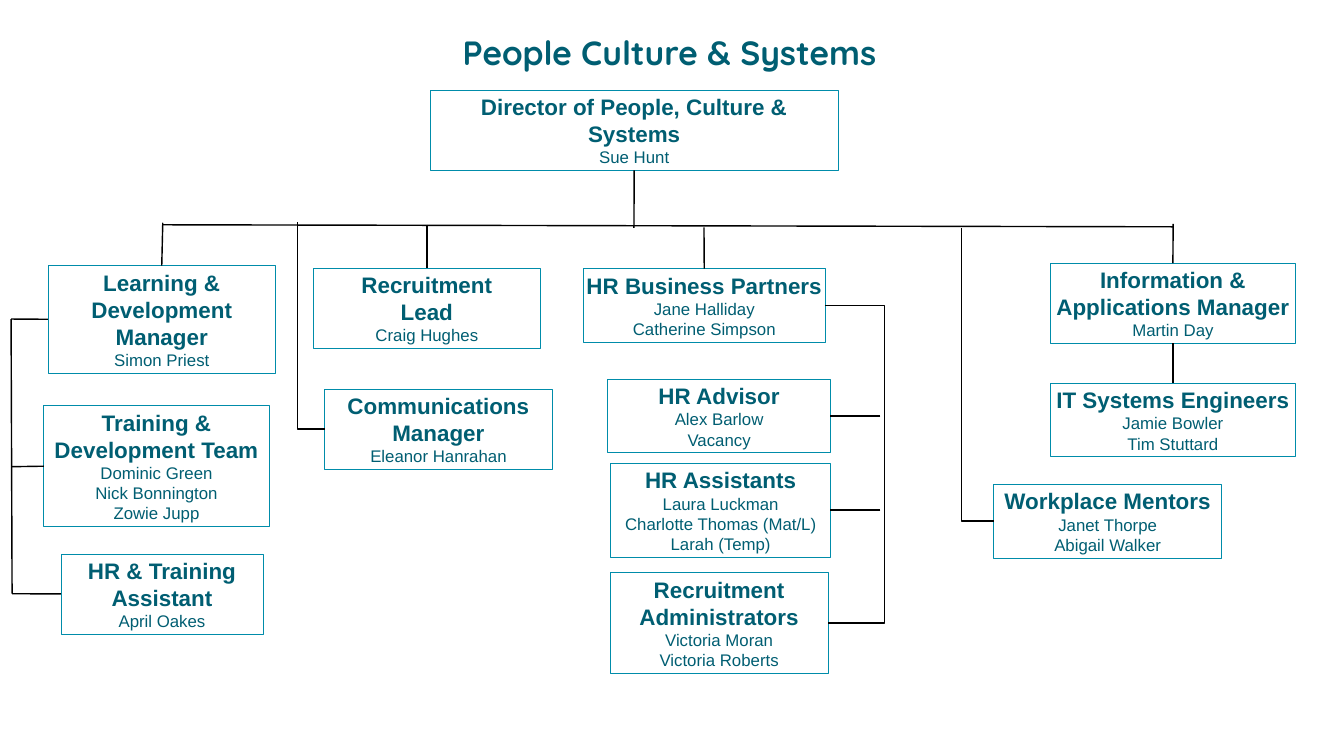
from lxml.etree import SubElement
from pptx import Presentation
from pptx.dml.color import RGBColor
from pptx.enum.shapes import MSO_CONNECTOR as Link, MSO_SHAPE as Shape
from pptx.enum.text import MSO_ANCHOR as Anchor, MSO_AUTO_SIZE as AutoSize, PP_ALIGN as Align
from pptx.oxml.ns import qn
from pptx.util import Inches, Pt

TEAL, BORDER, BLACK = "005E72", "008CAA", "000000"
TOP, LEFT, BOTTOM, RIGHT = range(4)


def color(value):
    return RGBColor.from_string(value)


def add_line(paragraph, words, size, bold, font="Arial"):
    paragraph.alignment = Align.CENTER
    run = paragraph.add_run()
    run.text = words
    run.font.name = font
    run.font.size = Pt(size)
    run.font.bold = bold
    run.font.color.rgb = color(TEAL)


def heading(slide, left, top, width, height):
    box = slide.shapes.add_textbox(Inches(left), Inches(top), Inches(width), Inches(height))
    box.text_frame.word_wrap = True
    paragraph = box.text_frame.paragraphs[0]
    paragraph.line_spacing = 0.9
    add_line(paragraph, "People Culture & Systems", 48, True, "Quicksand")


def role(slide, left, top, width, height, titles, people):
    card = slide.shapes.add_shape(
        Shape.RECTANGLE, Inches(left), Inches(top), Inches(width), Inches(height))
    card.shadow.inherit = False
    card.fill.background()
    card.line.color.rgb = color(BORDER)
    card.line.width = Pt(1)
    frame = card.text_frame
    frame.word_wrap = True
    frame.auto_size = AutoSize.SHAPE_TO_FIT_TEXT
    frame.vertical_anchor = Anchor.MIDDLE
    frame.margin_left = frame.margin_right = Inches(0.04)
    frame.margin_top = frame.margin_bottom = Inches(0.06)
    lines = [(title, 32, True) for title in titles] + [(person, 24, False) for person in people]
    for index, line in enumerate(lines):
        paragraph = frame.add_paragraph() if index else frame.paragraphs[0]
        add_line(paragraph, *line)
    return card


def join(slide, start, end, source=None, target=None, bend=None):
    kind = Link.STRAIGHT if bend is None else Link.ELBOW
    connector = slide.shapes.add_connector(kind, *(Inches(v) for v in (*start, *end)))
    if source:
        connector.begin_connect(*source)
    if target:
        connector.end_connect(*target)
    connector.line.color.rgb = color(BLACK)
    connector.line.width = Pt(2)
    properties = connector._element.spPr
    SubElement(properties, qn("a:effectLst"))
    if bend is not None:
        span = connector.end_x - connector.begin_x
        ratio = round((Inches(bend) - connector.begin_x) / span * 100000)
        guides = properties.find(qn("a:prstGeom")).get_or_add_avLst()
        SubElement(guides, qn("a:gd"), name="adj1", fmla=f"val {ratio}")


def director(slide, left, top):
    card = role(slide, left, top, 8.11, 1.59,
                ["Director of People, Culture & Systems"], ["Sue Hunt"])
    center = left + 4.05
    join(slide, (center, top + 1.59), (center, top + 2.73), source=(card, BOTTOM))
    join(slide, (3.23, top + 2.67), (23.28, top + 2.71))


def learning_branch(slide, left, top):
    manager = role(slide, left + 0.73, top + 0.85, 4.52, 2.13,
                   ["Learning & Development Manager"], ["Simon Priest"])
    team = role(slide, left + 0.65, top + 3.63, 4.47, 2.4,
                ["Training & Development Team"],
                ["Dominic Green", "Nick Bonnington", "Zowie Jupp"])
    assistant = role(slide, left + 0.99, top + 6.57, 4.01, 1.59,
                     ["HR & Training Assistant"], ["April Oakes"])
    join(slide, (left + 3.01, top), (left + 2.99, top + 0.85), target=(manager, TOP))
    join(slide, (left, top + 1.91), (left + 0.02, top + 7.36))
    for card, rail, y in ((manager, 0, 1.91), (team, 0, 4.84), (assistant, 0.02, 7.36)):
        join(slide, (left + 1, top + y), (left + rail, top + y), source=(card, LEFT))


def recruitment_branch(slide, left, top):
    lead = role(slide, left + 0.31, top + 0.91, 4.52, 1.59,
                ["Recruitment", "Lead"], ["Craig Hughes"])
    communications = role(slide, left + 0.54, top + 3.31, 4.52, 1.59,
                          ["Communications Manager"], ["Eleanor Hanrahan"])
    join(slide, (left + 2.57, top + 0.05), (left + 2.57, top + 0.91), target=(lead, TOP))
    join(slide, (left, top), (left + 0.54, top + 4.1),
         target=(communications, LEFT), bend=left)


def partners_branch(slide, left, top):
    partners = role(slide, left, top + 0.82, 4.79, 1.46,
                    ["HR Business Partners"], ["Jane Halliday", "Catherine Simpson"])
    advisor = role(slide, left + 0.48, top + 3.01, 4.42, 1.46,
                   ["HR Advisor"], ["Alex Barlow", "Vacancy"])
    assistants = role(slide, left + 0.54, top + 4.68, 4.36, 1.86, ["HR Assistants"],
                      ["Laura Luckman", "Charlotte Thomas (Mat/L)", "Larah (Temp)"])
    administrators = role(slide, left + 0.53, top + 6.85, 4.32, 2,
                          ["Recruitment Administrators"],
                          ["Victoria Moran", "Victoria Roberts"])
    join(slide, (left + 2.39, top), (left + 2.39, top + 0.82), target=(partners, TOP))
    join(slide, (left + 4.79, top + 1.55), (left + 4.85, top + 7.85),
         source=(partners, RIGHT), target=(administrators, RIGHT), bend=left + 5.98)
    for card, y in ((advisor, 3.74), (assistants, 5.61)):
        join(slide, (left + 5.89, top + y), (left + 4.9, top + y), target=(card, RIGHT))


def systems_branch(slide, left, top):
    manager = role(slide, left + 1.76, top + 0.78, 4.87, 1.59,
                   ["Information & Applications Manager"], ["Martin Day"])
    engineers = role(slide, left + 1.76, top + 3.16, 4.87, 1.46,
                     ["IT Systems Engineers"], ["Jamie Bowler", "Tim Stuttard"])
    mentors = role(slide, left + 0.64, top + 5.17, 4.52, 1.46,
                   ["Workplace Mentors"], ["Janet Thorpe", "Abigail Walker"])
    center = left + 4.2
    join(slide, (center, top), (center, top + 0.78), target=(manager, TOP))
    join(slide, (center, top + 2.37), (center, top + 3.16),
         source=(manager, BOTTOM), target=(engineers, TOP))
    join(slide, (left, top + 0.08), (left + 0.64, top + 5.9),
         target=(mentors, LEFT), bend=left)


def main():
    deck = Presentation()
    deck.slide_width, deck.slide_height = Inches(26.67), Inches(15)
    slide = deck.slides.add_slide(deck.slide_layouts[6])
    heading(slide, 0.68, 0.68, 25.21, 1)
    director(slide, 8.53, 1.79)
    learning_branch(slide, 0.22, 4.42)
    recruitment_branch(slide, 5.9, 4.41)
    partners_branch(slide, 11.58, 4.51)
    systems_branch(slide, 19.08, 4.44)
    deck.save("out.pptx")


if __name__ == "__main__":
    main()
